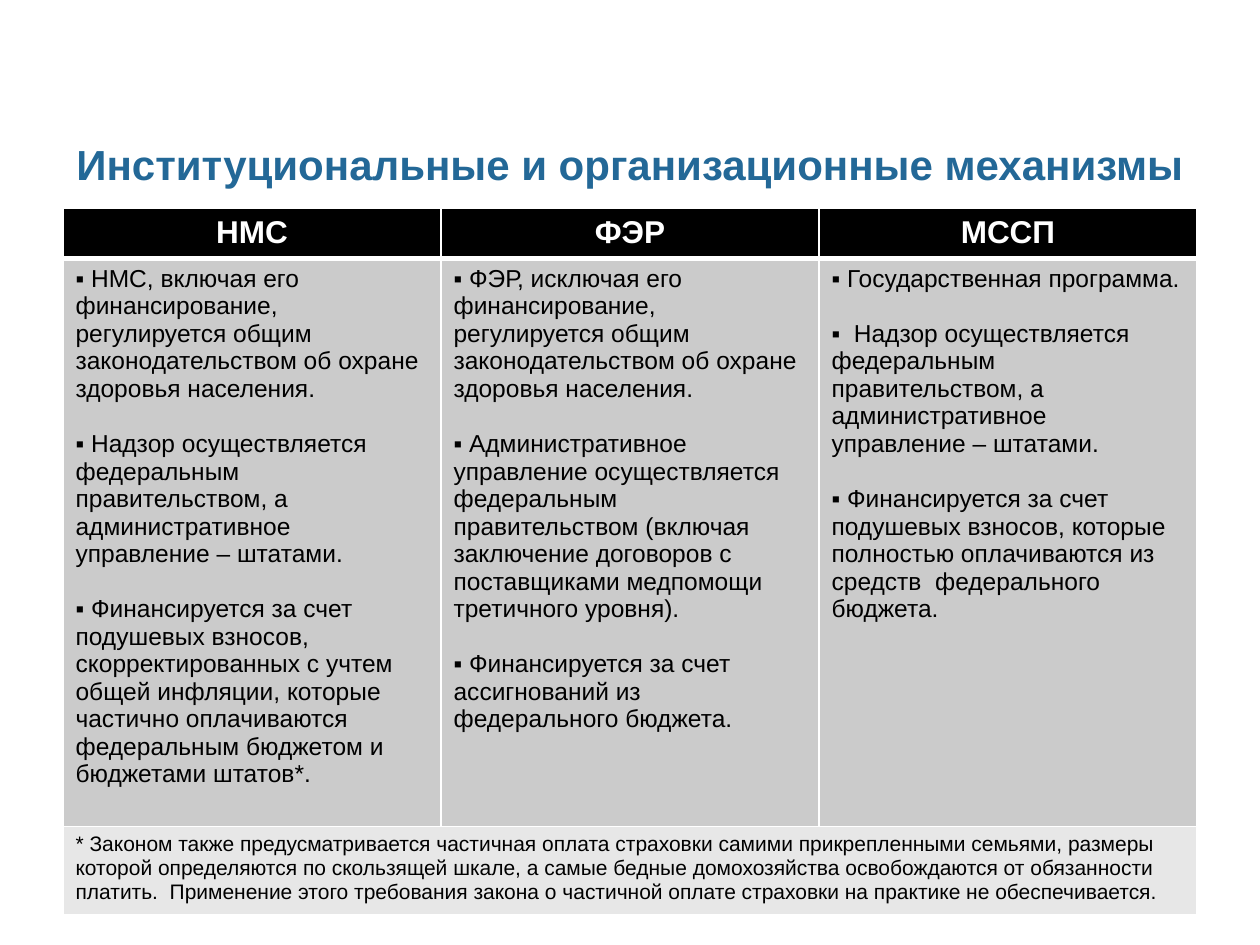
from lxml.etree import SubElement
from pptx import Presentation
from pptx.dml.color import RGBColor
from pptx.enum.text import MSO_ANCHOR, PP_ALIGN
from pptx.oxml.ns import qn
from pptx.util import Pt

COLORS = {
    "title": "236897",
    "header": "000000",
    "body": "CBCBCB",
    "footnote": "E7E7E7",
    "dark": "000000",
    "light": "FFFFFF",
}
FONT = "Arial"
TITLE = "Институциональные и организационные механизмы"
PROGRAMS = {
    "НМС": [
        " НМС, включая его финансирование, регулируется общим законодательством об охране здоровья населения.",
        " Надзор осуществляется федеральным правительством, а административное управление – штатами.",
        " Финансируется за счет подушевых взносов, скорректированных с учтем  общей инфляции, "
        "которые частично оплачиваются федеральным бюджетом и бюджетами штатов*.",
    ],
    "ФЭР": [
        " ФЭР, исключая его финансирование, регулируется общим законодательством об охране здоровья населения.",
        " Административное управление осуществляется федеральным правительством "
        "(включая заключение договоров с поставщиками медпомощи третичного уровня).",
        " Финансируется за счет ассигнований из федерального бюджета.",
    ],
    "МССП": [
        " Государственная программа.",
        "  Надзор осуществляется федеральным правительством, а административное управление – штатами.",
        " Финансируется за счет подушевых взносов, которые полностью оплачиваются из средств  федерального бюджета.",
    ],
}
FOOTNOTE = (
    "* Законом также предусматривается частичная оплата страховки самими прикрепленными семьями, "
    "размеры которой определяются по скользящей шкале, а самые бедные домохозяйства освобождаются "
    "от обязанности платить.  Применение этого требования закона о частичной оплате страховки "
    "на практике не обеспечивается."
)
ROW_HEIGHTS = (28.8, 321.8, 47.4)
COLUMN_WIDTH = 216
PARAGRAPH_GAP = 15.75
THIN, THICK = 1, 3


def color(name):
    """Return the named colour."""
    return RGBColor.from_string(COLORS[name])


def format_paragraph(paragraph, size, color_name, bold=False, alignment=PP_ALIGN.LEFT):
    """Set the alignment of a paragraph and the font of its runs."""
    paragraph.alignment = alignment
    for run in paragraph.runs:
        run.font.name = FONT
        run.font.size = Pt(size)
        run.font.bold = bold
        run.font.color.rgb = color(color_name)


def add_bullet(paragraph):
    """Give a paragraph a square bullet without a hanging indent."""
    properties = paragraph._p.get_or_add_pPr()
    properties.set("marL", "0")
    properties.set("indent", "0")
    SubElement(properties, qn("a:buFont"), typeface=FONT)
    SubElement(properties, qn("a:buChar"), char="▪")


def style_cell(cell, fill_name, top=THIN, bottom=THIN):
    """Set the borders and then the fill of a cell."""
    properties = cell._tc.get_or_add_tcPr()
    for side, width in (("L", THIN), ("R", THIN), ("T", top), ("B", bottom)):
        line = SubElement(properties, qn(f"a:ln{side}"), w=str(Pt(width)))
        fill = SubElement(line, qn("a:solidFill"))
        SubElement(fill, qn("a:srgbClr"), val=COLORS["light"])
    cell.fill.solid()
    cell.fill.fore_color.rgb = color(fill_name)


def add_title(slide):
    """Add the centred slide title."""
    text_box = slide.shapes.add_textbox(Pt(0), Pt(59.8), Pt(720), Pt(67.7))
    text_frame = text_box.text_frame
    text_frame.word_wrap = True
    text_frame.vertical_anchor = MSO_ANCHOR.MIDDLE
    text_frame.text = TITLE
    format_paragraph(text_frame.paragraphs[0], 24, "title", True, PP_ALIGN.CENTER)


def fill_header(cell, text):
    """Fill a column heading."""
    style_cell(cell, "header", bottom=THICK)
    cell.text_frame.text = text
    format_paragraph(cell.text_frame.paragraphs[0], 18, "light", True, PP_ALIGN.CENTER)


def fill_body(cell, items):
    """Fill a cell with spaced bulleted paragraphs."""
    style_cell(cell, "body", top=THICK)
    cell.text_frame.text = "\n".join(items)
    for index, paragraph in enumerate(cell.text_frame.paragraphs):
        add_bullet(paragraph)
        if index:
            paragraph.space_before = Pt(PARAGRAPH_GAP)
        format_paragraph(paragraph, 14, "dark")


def fill_footnote(table):
    """Merge the last row and fill it with the footnote."""
    last_row = len(ROW_HEIGHTS) - 1
    cell = table.cell(last_row, 0)
    cell.merge(table.cell(last_row, len(PROGRAMS) - 1))
    for column in range(len(PROGRAMS)):
        style_cell(table.cell(last_row, column), "footnote")
    cell.text_frame.text = FOOTNOTE
    format_paragraph(cell.text_frame.paragraphs[0], 12, "dark")


def add_program_table(slide):
    """Add the table that compares the programs."""
    count = len(PROGRAMS)
    table = slide.shapes.add_table(
        len(ROW_HEIGHTS), count, Pt(36), Pt(119),
        Pt(COLUMN_WIDTH * count), Pt(sum(ROW_HEIGHTS)),
    ).table
    table.horz_banding = False
    for row, height in zip(table.rows, ROW_HEIGHTS):
        row.height = Pt(height)
    for index, (name, items) in enumerate(PROGRAMS.items()):
        table.columns[index].width = Pt(COLUMN_WIDTH)
        fill_header(table.cell(0, index), name)
        fill_body(table.cell(1, index), items)
    fill_footnote(table)


def main():
    """Build and save the presentation."""
    presentation = Presentation()
    presentation.slide_width = Pt(720)
    presentation.slide_height = Pt(540)
    slide = presentation.slides.add_slide(presentation.slide_layouts[6])
    add_title(slide)
    add_program_table(slide)
    presentation.save("out.pptx")


if __name__ == "__main__":
    main()
